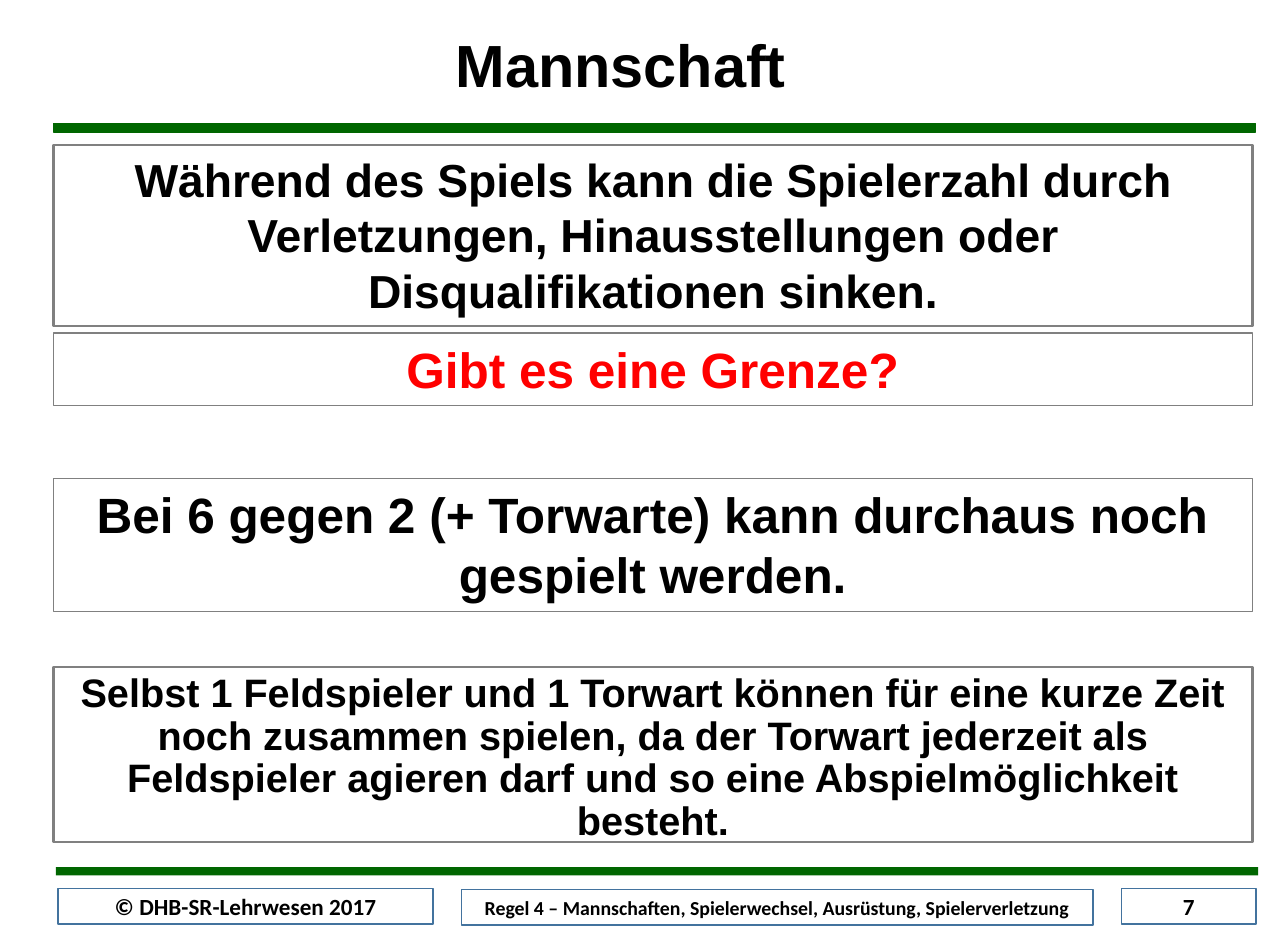
from pptx import Presentation
from pptx.dml.color import RGBColor
from pptx.enum.shapes import MSO_SHAPE
from pptx.enum.text import MSO_ANCHOR, PP_ALIGN
from pptx.util import Pt

SCALE = 9144
COLORS = {"green": "006600", "blue": "43739E", "gray": "808080",
          "white": "FFFFFF", "black": "000000", "red": "FF0000"}


class Deck:
    """Holds the slide style and draws its elements, 100 px to the inch."""

    def __init__(self, width, height):
        self.prs = Presentation()
        self.prs.slide_width = width * SCALE
        self.prs.slide_height = height * SCALE
        self.slide = self.prs.slides.add_slide(self.prs.slide_layouts[5])

    def color(self, name):
        return RGBColor.from_string(COLORS[name])

    def label(self, shape, text, size, font="Arial", color="black",
              anchor=MSO_ANCHOR.TOP, space=1.0):
        frame = shape.text_frame
        frame.text = text
        frame.word_wrap = True
        frame.vertical_anchor = anchor
        frame.margin_left = frame.margin_right = 10 * SCALE
        frame.margin_top = frame.margin_bottom = 5 * SCALE
        para = frame.paragraphs[0]
        para.alignment = PP_ALIGN.CENTER
        para.line_spacing = space
        para.space_before = Pt(0)
        style = para.runs[0].font
        style.name, style.size, style.bold = font, Pt(size), True
        style.color.rgb = self.color(color)

    def title(self, text, left, top, width, height):
        shape = self.slide.shapes.title
        shape.left, shape.top = left * SCALE, top * SCALE
        shape.width, shape.height = width * SCALE, height * SCALE
        self.label(shape, text, 36, anchor=MSO_ANCHOR.MIDDLE, space=0.9)

    def rect(self, left, top, width, height, fill=None, line=None, weight=1):
        shape = self.slide.shapes.add_shape(
            MSO_SHAPE.RECTANGLE, left * SCALE, top * SCALE,
            width * SCALE, height * SCALE)
        shape.shadow.inherit = False
        if fill:
            shape.fill.solid()
            shape.fill.fore_color.rgb = self.color(fill)
        else:
            shape.fill.background()
        if line:
            shape.line.color.rgb = self.color(line)
            shape.line.width = Pt(weight)
        else:
            shape.line.fill.background()
        return shape

    def bar(self, left, top, line=None):
        self.rect(left, top, 1011, 7, "green", line, 0.75)

    def panel(self, top, height, weight, text, size, color="black", space=1.0):
        shape = self.rect(45, top, 1008, height, None, "gray", weight)
        self.label(shape, text, size, color=color, space=space)

    def footer(self, left, top, width, text, size):
        shape = self.rect(left, top, width, 30, "white", "blue")
        self.label(shape, text, size, "Calibri", anchor=MSO_ANCHOR.MIDDLE)


def main():
    deck = Deck(1083, 792)
    deck.title("Mannschaft", 337, 26, 370, 63)
    deck.bar(45, 104, "green")
    deck.bar(47, 729)
    deck.panel(122, 152, 1.5, "Während des Spiels kann die Spielerzahl durch "
               "Verletzungen, Hinausstellungen oder Disqualifikationen sinken.", 28)
    deck.panel(280, 61, 0.75, "Gibt es eine Grenze?", 30, "red")
    deck.panel(402, 112, 0.75, "Bei 6 gegen 2 (+ Torwarte) kann durchaus noch "
               "gespielt werden.", 30)
    deck.panel(561, 147, 1.5, "Selbst 1 Feldspieler und 1 Torwart können für eine "
               "kurze Zeit noch zusammen spielen, da der Torwart jederzeit als "
               "Feldspieler agieren darf und so eine Abspielmöglichkeit besteht.",
               24, space=0.9)
    deck.footer(49, 747, 315, "© DHB-SR-Lehrwesen 2017", 14)
    deck.footer(388, 748, 531, "Regel 4 – Mannschaften, Spielerwechsel, "
                "Ausrüstung, Spielerverletzung", 12)
    deck.footer(943, 747, 113, "7", 14)
    deck.prs.save("out.pptx")


if __name__ == "__main__":
    main()
